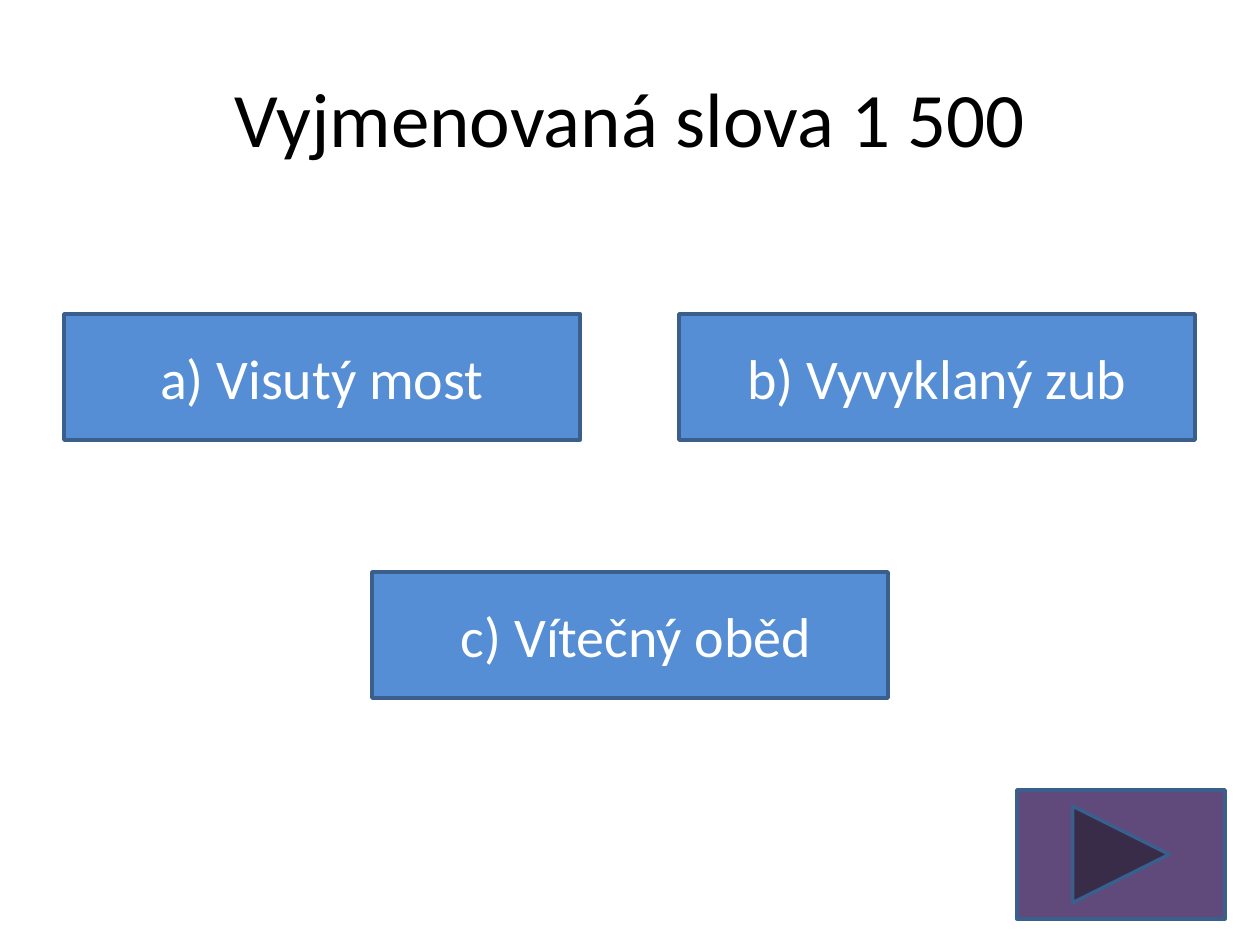
from pptx import Presentation
from pptx.dml.color import RGBColor as RGB
from pptx.enum.shapes import MSO_SHAPE as Shape
from pptx.enum.text import MSO_ANCHOR as Anchor, PP_ALIGN as Align
from pptx.util import Pt

THEME = {
    "font": "Calibri",
    "title": {"size": Pt(44), "color": RGB(0, 0, 0)},
    "answer": {"size": Pt(32), "color": RGB(255, 255, 255)},
    "answer_fill": RGB(0x55, 0x8E, 0xD5),
    "next_fill": RGB(0x60, 0x4A, 0x7B),
    "outline": RGB(0x3A, 0x5F, 0x8C),
    "outline_width": Pt(2),
}
EMU_PER_PX = 914400 / 126


def px(length):
    return round(length * EMU_PER_PX)


def write(shape, text, style):
    frame = shape.text_frame
    frame.word_wrap = True
    frame.vertical_anchor = Anchor.MIDDLE
    para = frame.paragraphs[0]
    para.alignment = Align.CENTER
    span = para.add_run()
    span.text = text
    for name, value in {"name": THEME["font"], "size": style["size"]}.items():
        setattr(span.font, name, value)
    span.font.color.rgb = style["color"]
    return para


deck = Presentation()
deck.slide_width, deck.slide_height = px(1260), px(945)
page = deck.slides.add_slide(deck.slide_layouts[5])

# Title
title = page.shapes.title
title_place = {"left": 63, "top": 38, "width": 1134, "height": 157}
for name, value in title_place.items():
    setattr(title, name, px(value))
write(title, "Vyjmenovaná slova 1 500", THEME["title"])

# Answer buttons and the button to the next slide
blank, forward = Shape.ACTION_BUTTON_CUSTOM, Shape.ACTION_BUTTON_FORWARD_OR_NEXT
answer_size = (516, 126)
buttons = [
    (blank, (64, 314), answer_size, "answer_fill", "a) Visutý most"),
    (blank, (679, 314), answer_size, "answer_fill", "b) Vyvyklaný zub"),
    (blank, (372, 572), answer_size, "answer_fill", " c) Vítečný oběd"),
    (forward, (1017, 790), (208, 129), "next_fill", None),
]
for kind, place, size, fill, text in buttons:
    box = page.shapes.add_shape(kind, *map(px, place + size))
    box.shadow.inherit = False
    box.fill.solid()
    box.fill.fore_color.rgb = THEME[fill]
    box.line.color.rgb = THEME["outline"]
    box.line.width = THEME["outline_width"]
    if text:
        para = write(box, text, THEME["answer"])
        para.space_before = Pt(6)
        # Hanging indent
        indent = para._p.get_or_add_pPr()
        for name, value in {"marL": px(48), "indent": px(-48)}.items():
            indent.set(name, str(value))

deck.save("out.pptx")
